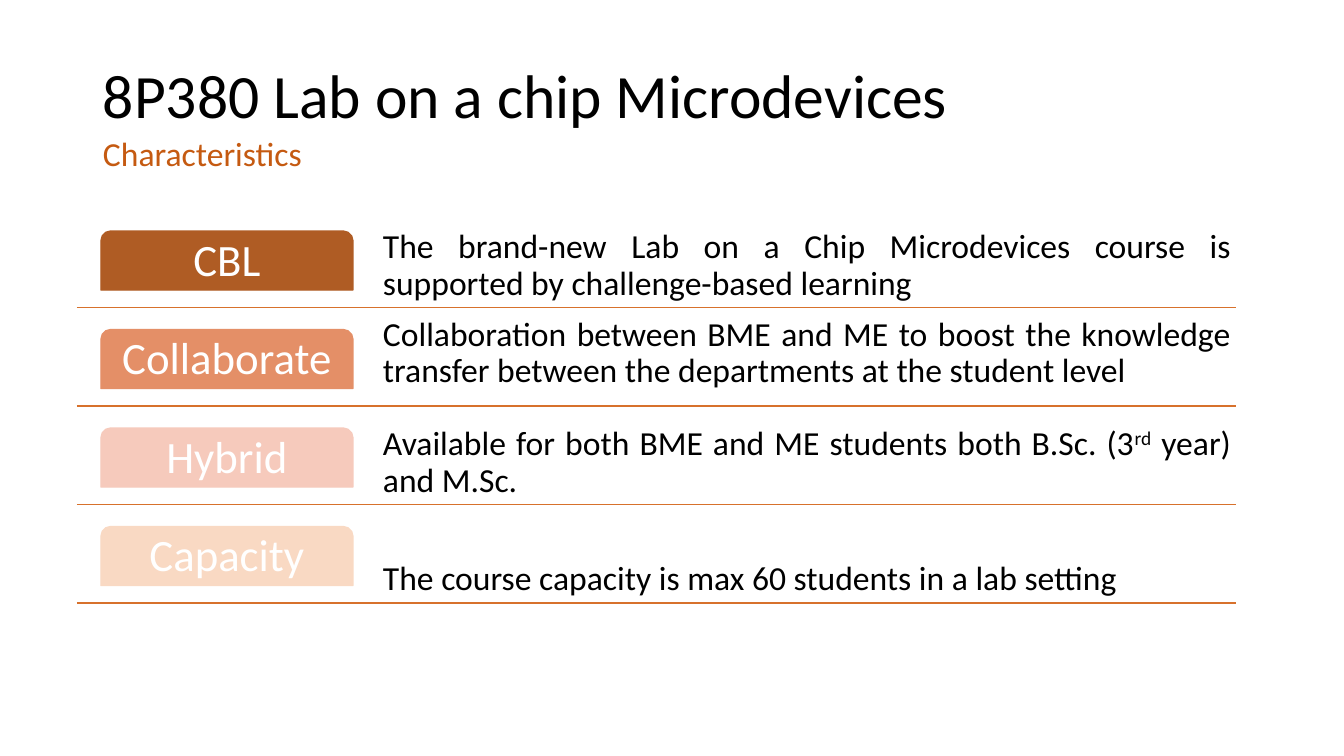
from lxml.etree import SubElement
from pptx import Presentation
from pptx.dml.color import RGBColor
from pptx.enum.shapes import MSO_CONNECTOR, MSO_SHAPE
from pptx.enum.text import MSO_ANCHOR as Anchor, PP_ALIGN as Align
from pptx.oxml.ns import qn
from pptx.util import Emu, Pt

BLACK = RGBColor(0x00, 0x00, 0x00)
WHITE = RGBColor(0xFF, 0xFF, 0xFF)
RUST = RGBColor(0xC5, 0x5A, 0x11)
RULE = RGBColor(0xD7, 0x71, 0x2C)
BROWN = RGBColor(0xAF, 0x5C, 0x24)
ORANGE = RGBColor(0xE4, 0x8F, 0x67)
PINK = RGBColor(0xF6, 0xCA, 0xBC)
PEACH = RGBColor(0xF9, 0xD9, 0xC3)

# label, colour, anchor, alignment, text spans (every second one is superscript)
CHARACTERISTICS = [
    ("CBL", BROWN, Anchor.BOTTOM, Align.JUSTIFY,
     ["The brand-new Lab on a Chip Microdevices course is "
      "supported by challenge-based learning"]),
    ("Collaborate", ORANGE, Anchor.TOP, Align.JUSTIFY,
     ["Collaboration between BME and ME to boost the knowledge "
      "transfer between the departments at the student level"]),
    ("Hybrid", PINK, Anchor.BOTTOM, Align.JUSTIFY,
     ["Available for both BME and ME students both B.Sc. (3", "rd", " year) and M.Sc."]),
    ("Capacity", PEACH, Anchor.BOTTOM, Align.LEFT,
     ["The course capacity is max 60 students in a lab setting"]),
]


def px(length):
    return Emu(round(length * 914400 / 100.8))


def write(shape, spans, size, color=BLACK, align=Align.LEFT,
          anchor=Anchor.MIDDLE, margins=(5, 5)):
    """Fill a shape with one paragraph; margins are (sides, top and bottom)."""
    frame = shape.text_frame
    frame.word_wrap = True
    frame.vertical_anchor = anchor
    frame.margin_left = frame.margin_right = px(margins[0])
    frame.margin_top = frame.margin_bottom = px(margins[1])
    para = frame.paragraphs[0]
    para.alignment = align
    para.line_spacing = 0.9
    for index, text in enumerate(spans):
        span = para.add_run()
        span.text = text
        span.font.name = "Calibri"
        span.font.size = Pt(size)
        span.font.color.rgb = color
        if index % 2:
            span.font._element.set("baseline", "30000")


def add_text(page, box, spans, size, **style):
    write(page.shapes.add_textbox(*map(px, box)), spans, size, **style)


def add_heading(page, left, top, width):
    add_text(page, (left, top, width, 146), ["8P380 Lab on a chip Microdevices"],
             44, margins=(10, 5))
    add_text(page, (left, top + 57, width, 146), ["Characteristics"],
             24, color=RUST, margins=(10, 5))


def add_rule(page, left, top, width):
    rule = page.shapes.add_connector(
        MSO_CONNECTOR.STRAIGHT, px(left), px(top), px(left + width), px(top))
    rule.line.color.rgb = RULE
    rule.line.width = Pt(1)
    SubElement(rule._element.spPr, qn("a:effectLst"))


def add_tab(page, box, label, color):
    tab = page.shapes.add_shape(MSO_SHAPE.ROUND_2_SAME_RECTANGLE, *map(px, box))
    tab.shadow.inherit = False
    tab.fill.solid()
    tab.fill.fore_color.rgb = color
    tab.line.color.rgb = color
    tab.line.width = Pt(1)
    write(tab, [label], 32, color=WHITE, align=Align.CENTER, margins=(7, 7))


def add_row(page, box, label, color, anchor, align, spans):
    left, top, width, height = box
    add_rule(page, left, top + height, width)
    add_text(page, (left + 301, top, width - 301, height), spans, 24,
             align=align, anchor=anchor)
    add_tab(page, (left + 24, top + 17, 252, 59), label, color)


def add_characteristics(page, left, top, width, height):
    gap = 5
    pitch = (height + gap) / len(CHARACTERISTICS)
    for index, row in enumerate(CHARACTERISTICS):
        add_row(page, (left, top + index * pitch, width, pitch - gap), *row)


def main():
    deck = Presentation()
    deck.slide_width, deck.slide_height = px(1344), px(756)
    page = deck.slides.add_slide(deck.slide_layouts[6])
    add_heading(page, 93, 26, 1159)
    add_characteristics(page, 77, 214, 1159, 389)
    deck.save("out.pptx")


if __name__ == "__main__":
    main()
